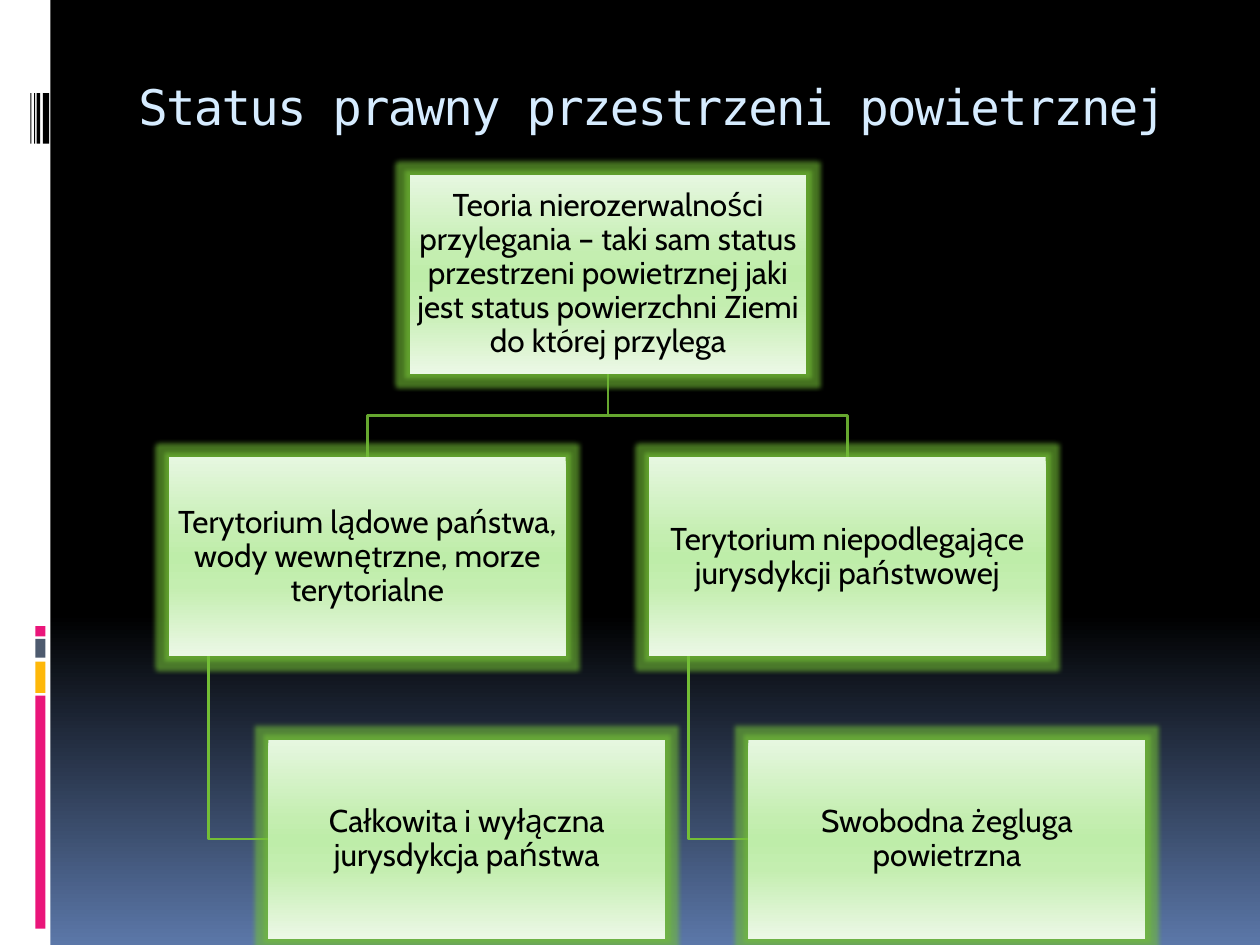
from lxml import etree
from pptx import Presentation
from pptx import util as u
from pptx.dml.color import RGBColor
from pptx.enum import shapes, text
from pptx.oxml import ns

WHITE = RGBColor(0xFF, 0xFF, 0xFF)
BLACK = RGBColor(0x00, 0x00, 0x00)
PINK = RGBColor(0xEA, 0x15, 0x7A)
AMBER = RGBColor(0xFE, 0xB8, 0x0A)
SLATE = RGBColor(0x4E, 0x5B, 0x6F)
NIGHT_BLUE = RGBColor(0x5B, 0x77, 0xA8)
ICE = RGBColor(0xD6, 0xEC, 0xFF)
GREEN = RGBColor(0x73, 0xBE, 0x36)
DARK_GREEN = RGBColor(0x66, 0xA7, 0x2F)
MINT = RGBColor(0xE6, 0xF7, 0xE0)
MID_GREEN = RGBColor(0xC4, 0xEE, 0xB0)
CORE_GREEN = RGBColor(0xBE, 0xED, 0xA9)
PALE_MINT = RGBColor(0xEC, 0xF8, 0xE6)

NIGHT = [(0, BLACK), (65, BLACK), (100, NIGHT_BLUE)]
LEAF = [(0, MINT), (40, MID_GREEN), (50, CORE_GREEN), (65, MID_GREEN), (100, PALE_MINT)]

BOX_WIDTH, BOX_HEIGHT = 3.15, 1.58
ROW_TOPS = [1.39, 3.63, 5.87]
ROOT_LEFT = 3.25
INDENT = 0.79  # shift of a third-row box against its parent

ROOT = ("Teoria nierozerwalności przylegania – taki sam status przestrzeni "
        "powietrznej jaki jest status powierzchni Ziemi do której przylega")
BRANCHES = [
    (1.34, "Terytorium lądowe państwa, wody wewnętrzne, morze terytorialne",
     "Całkowita i wyłączna jurysdykcja państwa"),
    (5.15, "Terytorium niepodlegające jurysdykcji państwowej",
     "Swobodna żegluga powietrzna"),
]
# left, top, width, height, colour
SIDE_BARS = [
    (0, 0, 0.4, 7.5, WHITE),
    (0.28, 5.52, 0.08, 1.85, PINK),
    (0.28, 5.25, 0.08, 0.25, AMBER),
    (0.28, 5.07, 0.08, 0.15, SLATE),
    (0.28, 4.97, 0.08, 0.08, PINK),
    (0.34, 0.74, 0.05, 0.4, BLACK),
    (0.29, 0.74, 0.03, 0.4, BLACK),
    (0.27, 0.74, 0.01, 0.4, BLACK),
    (0.24, 0.74, 0.01, 0.4, BLACK),
]


def add_color(parent, color, alpha=None):
    element = etree.SubElement(parent, ns.qn("a:srgbClr"), val=str(color))
    if alpha is not None:
        etree.SubElement(element, ns.qn("a:alpha"), val=str(alpha * 1000))


def set_gradient(fill, owner, stops):
    """Fill from top to bottom with (percent, colour) stops."""
    fill.gradient()
    fill.gradient_angle = 270
    stop_list = owner.find(".//" + ns.qn("a:gsLst"))
    for old_stop in list(stop_list):
        stop_list.remove(old_stop)
    for percent, color in stops:
        stop = etree.SubElement(stop_list, ns.qn("a:gs"), pos=str(percent * 1000))
        add_color(stop, color)


def write_text(frame, content, *, font, size, color, align=text.PP_ALIGN.LEFT,
               anchor=text.MSO_ANCHOR.TOP, inset=None, line_spacing=None, tracking=None):
    frame.word_wrap = True
    frame.vertical_anchor = anchor
    if inset is not None:
        frame.margin_left = frame.margin_right = u.Inches(inset)
        frame.margin_top = frame.margin_bottom = u.Inches(inset)
    paragraph = frame.paragraphs[0]
    paragraph.alignment = align
    paragraph.line_spacing = line_spacing
    run = paragraph.add_run()
    run.text = content
    run.font.name = font
    run.font.size = u.Pt(size)
    run.font.color.rgb = color
    if tracking is not None:
        run.font._element.set("spc", str(tracking * 100))


class SlideBuilder:
    title_font = "DejaVu Sans Mono"
    body_font = "Cabin"

    def __init__(self, slide):
        self.slide = slide

    def background(self, stops):
        set_gradient(self.slide.background.fill, self.slide.element, stops)

    def rectangle(self, left, top, width, height, color=None):
        shape = self.slide.shapes.add_shape(
            shapes.MSO_SHAPE.RECTANGLE, *map(u.Inches, (left, top, width, height)))
        shape.shadow.inherit = False
        shape.line.fill.background()
        if color is not None:
            shape.fill.solid()
            shape.fill.fore_color.rgb = color
        return shape

    def title(self, content):
        box = self.slide.shapes.add_textbox(*map(u.Inches, (1, 0.56, 8.5, 0.75)))
        write_text(box.text_frame, content, font=self.title_font, size=28,
                   color=ICE, tracking=-1)

    def glowing_box(self, left, top, content):
        shape = self.rectangle(left, top, BOX_WIDTH, BOX_HEIGHT)
        set_gradient(shape.fill, shape.element, LEAF)
        effects = shape.element.spPr.find(ns.qn("a:effectLst"))
        glow = etree.SubElement(effects, ns.qn("a:glow"), rad=str(u.Inches(0.07)))
        add_color(glow, GREEN, alpha=60)
        write_text(shape.text_frame, content, font=self.body_font, size=18, color=BLACK,
                   align=text.PP_ALIGN.CENTER, anchor=text.MSO_ANCHOR.MIDDLE,
                   inset=0.01, line_spacing=0.9)

    def elbow(self, points, color):
        """Open angular line through points given in inches."""
        start, *corners = [(u.Inches(x), u.Inches(y)) for x, y in points]
        builder = self.slide.shapes.build_freeform(*start)
        builder.add_line_segments(corners, close=False)
        shape = builder.convert_to_shape()
        shape.shadow.inherit = False
        shape.fill.background()
        shape.line.color.rgb = color
        shape.line.width = u.Pt(1.5)


def main():
    presentation = Presentation()
    presentation.slide_width = u.Inches(10)
    presentation.slide_height = u.Inches(7.5)
    builder = SlideBuilder(presentation.slides.add_slide(presentation.slide_layouts[6]))

    builder.background(NIGHT)
    for bar in SIDE_BARS:
        builder.rectangle(*bar)
    builder.title("Status prawny przestrzeni powietrznej")

    root_top, branch_top, leaf_top = ROW_TOPS
    root_bottom = root_top + BOX_HEIGHT
    root_center = ROOT_LEFT + BOX_WIDTH / 2
    fork = (root_bottom + branch_top) / 2
    leaf_middle = leaf_top + BOX_HEIGHT / 2

    for left, _, _ in BRANCHES:
        center = left + BOX_WIDTH / 2
        stem = left + BOX_WIDTH / 10
        builder.elbow([(root_center, root_bottom), (root_center, fork),
                       (center, fork), (center, branch_top)], DARK_GREEN)
        builder.elbow([(stem, branch_top + BOX_HEIGHT), (stem, leaf_middle),
                       (left + INDENT, leaf_middle)], GREEN)

    builder.glowing_box(ROOT_LEFT, root_top, ROOT)
    for left, branch, leaf in BRANCHES:
        builder.glowing_box(left, branch_top, branch)
        builder.glowing_box(left + INDENT, leaf_top, leaf)

    presentation.save("out.pptx")


if __name__ == "__main__":
    main()
